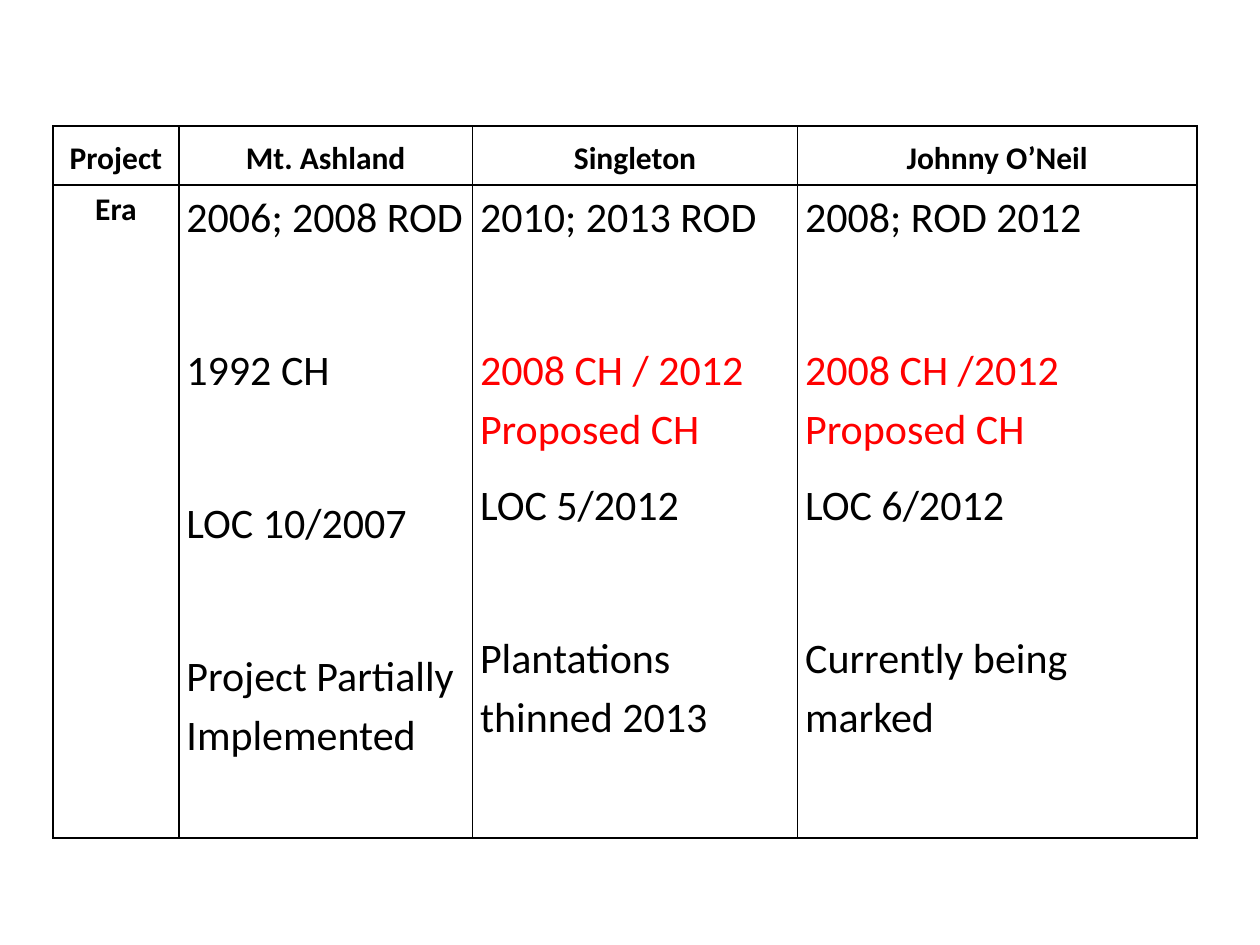
from dataclasses import dataclass

from lxml.etree import SubElement
from pptx import Presentation
from pptx.dml.color import RGBColor
from pptx.enum.text import MSO_ANCHOR, PP_ALIGN
from pptx.oxml.ns import qn
from pptx.util import Inches, Pt


@dataclass(frozen=True)
class Theme:
    font: str = "Calibri"
    ink: str = "000000"
    alert: str = "FF0000"
    label_size: int = 18
    body_size: int = 24
    line_spacing: float = 1.15
    space_after: int = 10
    section_gap: float = 43.7
    border: int = 1


class Deck:
    """Holds the theme and the current slide and draws its elements."""

    def __init__(self, prs, theme):
        self.theme = theme
        self.s = prs.slides.add_slide(prs.slide_layouts[6])

    def table(self, left, top, widths, heights):
        shape = self.s.shapes.add_table(
            len(heights), len(widths), Inches(left), Inches(top),
            Inches(sum(widths)), Inches(sum(heights)))
        table = shape.table
        table.first_row = table.horz_banding = False
        for column, width in zip(table.columns, widths):
            column.width = Inches(width)
        for row, height in zip(table.rows, heights):
            row.height = Inches(height)
        for cell in table.iter_cells():
            self.frame(cell)
        return table

    def frame(self, cell):
        cell.margin_left = cell.margin_right = Inches(0.06)
        cell.margin_top = cell.margin_bottom = 0
        tcPr = cell._tc.get_or_add_tcPr()
        for side in ("lnL", "lnR", "lnT", "lnB"):
            ln = SubElement(tcPr, qn(f"a:{side}"), w=str(Pt(self.theme.border)))
            fill = SubElement(ln, qn("a:solidFill"))
            SubElement(fill, qn("a:srgbClr"), val=self.theme.ink)
        cell.fill.background()

    def paragraph(self, p, text, size, color, bold=False):
        p.text = text
        p.line_spacing = self.theme.line_spacing
        p.space_after = Pt(self.theme.space_after)
        for r in p.runs:
            r.font.name = self.theme.font
            r.font.size = Pt(size)
            r.font.bold = bold
            r.font.color.rgb = RGBColor.from_string(color)

    def label(self, cell, text, anchor):
        cell.vertical_anchor = anchor
        p = cell.text_frame.paragraphs[0]
        self.paragraph(p, text, self.theme.label_size, self.theme.ink, True)
        p.alignment = PP_ALIGN.CENTER

    def history(self, cell, entries):
        tf = cell.text_frame
        for i, (text, color, gap) in enumerate(entries):
            p = tf.add_paragraph() if i else tf.paragraphs[0]
            self.paragraph(p, text, self.theme.body_size, color)
            if gap:
                p.space_before = Pt(self.theme.section_gap)


def main():
    prs = Presentation()
    prs.slide_width, prs.slide_height = Inches(10), Inches(7.5)
    theme = Theme()
    deck = Deck(prs, theme)
    ink, alert = theme.ink, theme.alert

    projects = {
        "Mt. Ashland": [
            ("2006; 2008 ROD", ink, False),
            ("1992 CH", ink, True),
            ("LOC 10/2007", ink, True),
            ("Project Partially Implemented", ink, True),
        ],
        "Singleton": [
            ("2010; 2013 ROD", ink, False),
            ("2008 CH / 2012 Proposed CH", alert, True),
            ("LOC 5/2012", ink, False),
            ("Plantations thinned 2013", ink, True),
        ],
        "Johnny O’Neil": [
            ("2008; ROD 2012", ink, False),
            ("2008 CH /2012 Proposed CH", alert, True),
            ("LOC 6/2012", ink, False),
            ("Currently being marked", ink, True),
        ],
    }

    table = deck.table(0.42, 1, [1, 2.33, 2.58, 3.17], [0.47, 5.18])
    deck.label(table.cell(0, 0), "Project", MSO_ANCHOR.MIDDLE)
    deck.label(table.cell(1, 0), "Era", MSO_ANCHOR.TOP)
    for col, (name, entries) in enumerate(projects.items(), 1):
        deck.label(table.cell(0, col), name, MSO_ANCHOR.MIDDLE)
        deck.history(table.cell(1, col), entries)

    prs.save("out.pptx")


if __name__ == "__main__":
    main()
